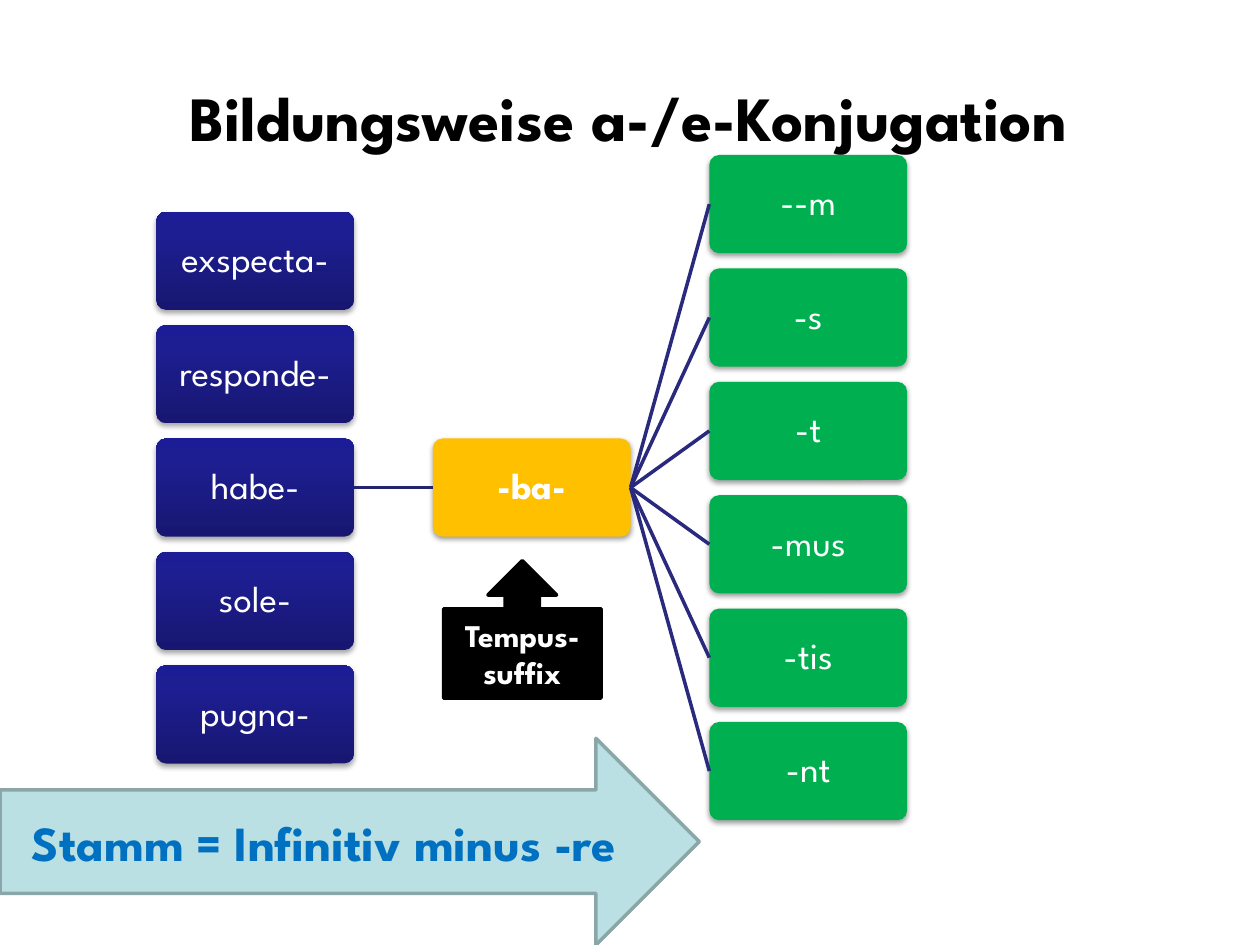
from lxml.etree import SubElement
from pptx import Presentation
from pptx.dml.color import RGBColor
from pptx.enum.shapes import MSO_CONNECTOR, MSO_SHAPE
from pptx.enum.text import MSO_ANCHOR, PP_ALIGN
from pptx.oxml import parse_xml
from pptx.oxml.ns import nsdecls, qn
from pptx.util import Inches, Pt

FONT = "League Spartan"
BLACK = RGBColor(0x00, 0x00, 0x00)
WHITE = RGBColor(0xFF, 0xFF, 0xFF)
AMBER = RGBColor(0xFF, 0xC0, 0x00)
GREEN = RGBColor(0x00, 0xB0, 0x50)
STEM_LINE = RGBColor(0x24, 0x24, 0x6F)
ENDING_LINE = RGBColor(0x29, 0x29, 0x7D)
PALE_BLUE = RGBColor(0xBB, 0xE0, 0xE3)
GREY_BLUE = RGBColor(0x8A, 0xA6, 0xA8)
BRIGHT_BLUE = RGBColor(0x00, 0x70, 0xC0)
# Stem gradient from bottom to top: (position in percent, colour)
NAVY_STOPS = [
    (0, RGBColor(0x17, 0x17, 0x71)),
    (80, RGBColor(0x1E, 0x1E, 0x93)),
    (100, RGBColor(0x1C, 0x1C, 0x96)),
]

# Grid of the word diagram, in inches
GRID_LEFT, GRID_TOP = 1.24, 1.23
COLUMN_STEP, ROW_STEP = 2.195, 0.9
CARD_WIDTH, CARD_HEIGHT = 1.57, 0.78

STEMS = ["exspecta-", "responde-", "habe-", "sole-", "pugna-"]
ENDINGS = ["--m", "-s", "-t", "-mus", "-tis", "-nt"]


def write(shape, text, align=PP_ALIGN.CENTER, **font_values):
    frame = shape.text_frame
    frame.word_wrap = True
    frame.vertical_anchor = MSO_ANCHOR.MIDDLE
    para = frame.paragraphs[0]
    para.alignment = align
    span = para.add_run()
    span.text = text
    color = font_values.pop("color")
    for name, value in {"name": FONT, **font_values}.items():
        setattr(span.font, name, value)
    span.font.color.rgb = color


def add_solid(page, kind, box, color):
    shape = page.shapes.add_shape(kind, *(Inches(length) for length in box))
    shape.shadow.inherit = False
    shape.fill.solid()
    shape.fill.fore_color.rgb = color
    return shape


def set_gradient(shape, stops):
    shape.fill.gradient()
    shape.fill.gradient_angle = 90
    stop_list = shape._element.spPr.find(qn("a:gradFill")).find(qn("a:gsLst"))
    for old_stop in list(stop_list):
        stop_list.remove(old_stop)
    for position, color in stops:
        stop = SubElement(stop_list, qn("a:gs"), pos=str(position * 1000))
        SubElement(stop, qn("a:srgbClr"), val=str(color))


def set_shadow(shape, distance, opacity):
    effects = shape._element.spPr.find(qn("a:effectLst"))
    effects.append(parse_xml(
        f'<a:outerShdw {nsdecls("a")} blurRad="40000" dist="{distance}" '
        f'dir="5400000" rotWithShape="0"><a:srgbClr val="000000">'
        f'<a:alpha val="{opacity * 1000}"/></a:srgbClr></a:outerShdw>'))


def add_card(page, column, row, text, color=None, bold=False):
    """Place one word card on the grid; without a colour it is a navy stem."""
    box = (GRID_LEFT + column * COLUMN_STEP, GRID_TOP + row * ROW_STEP,
           CARD_WIDTH, CARD_HEIGHT)
    card = add_solid(page, MSO_SHAPE.ROUNDED_RECTANGLE, box, color or WHITE)
    card.adjustments[0] = 0.1
    card.line.fill.background()
    if color is None:
        set_gradient(card, NAVY_STOPS)
        set_shadow(card, 23000, 35)
    else:
        set_shadow(card, 20000, 38)
    for side in ("left", "top", "right", "bottom"):
        setattr(card.text_frame, f"margin_{side}", Inches(0.01))
    write(card, text, size=Pt(21), bold=bold, color=WHITE)
    card.text_frame.paragraphs[0].line_spacing = 0.9
    return card


def link(page, start, end, color):
    line = page.shapes.add_connector(MSO_CONNECTOR.STRAIGHT, 0, 0, 0, 0)
    line.begin_connect(start, 3)
    line.end_connect(end, 1)
    line.line.color.rgb = color
    line.line.width = Pt(2)
    SubElement(line._element.spPr, qn("a:effectLst"))


def add_title(page, box, text):
    title = page.shapes.title
    for name, length in zip(("left", "top", "width", "height"), box):
        setattr(title, name, Inches(length))
    write(title, text, PP_ALIGN.LEFT, size=Pt(36), bold=True, color=BLACK)


def add_diagram(page):
    # Stems sit half a row lower than the endings
    stems = [add_card(page, 0, row + 0.5, text) for row, text in enumerate(STEMS)]
    suffix = add_card(page, 1, 2.5, "-ba-", AMBER, bold=True)
    link(page, stems[2], suffix, STEM_LINE)
    for row, text in enumerate(ENDINGS):
        link(page, suffix, add_card(page, 2, row, text, GREEN), ENDING_LINE)


def add_label(page, kind, box, text, fill, outline, size, color):
    label = add_solid(page, kind, box, fill)
    label.line.color.rgb = outline
    label.line.width = Pt(2)
    write(label, text, size=Pt(size), bold=True, color=color)


def main():
    deck = Presentation()
    deck.slide_width, deck.slide_height = Inches(10), Inches(7.5)
    page = deck.slides.add_slide(deck.slide_layouts[5])

    add_title(page, (1.4, 0.52, 8.05, 0.8), "Bildungsweise a-/e-Konjugation")
    add_diagram(page)
    # Rule for the stem and label of the tense suffix
    add_label(page, MSO_SHAPE.RIGHT_ARROW, (0, 5.86, 5.55, 1.64),
              "Stamm = Infinitiv minus -re", PALE_BLUE, GREY_BLUE, 28, BRIGHT_BLUE)
    add_label(page, MSO_SHAPE.UP_ARROW_CALLOUT, (3.52, 4.45, 1.25, 1.09),
              "Tempus-suffix", BLACK, BLACK, 18, WHITE)
    deck.save("out.pptx")


if __name__ == "__main__":
    main()
